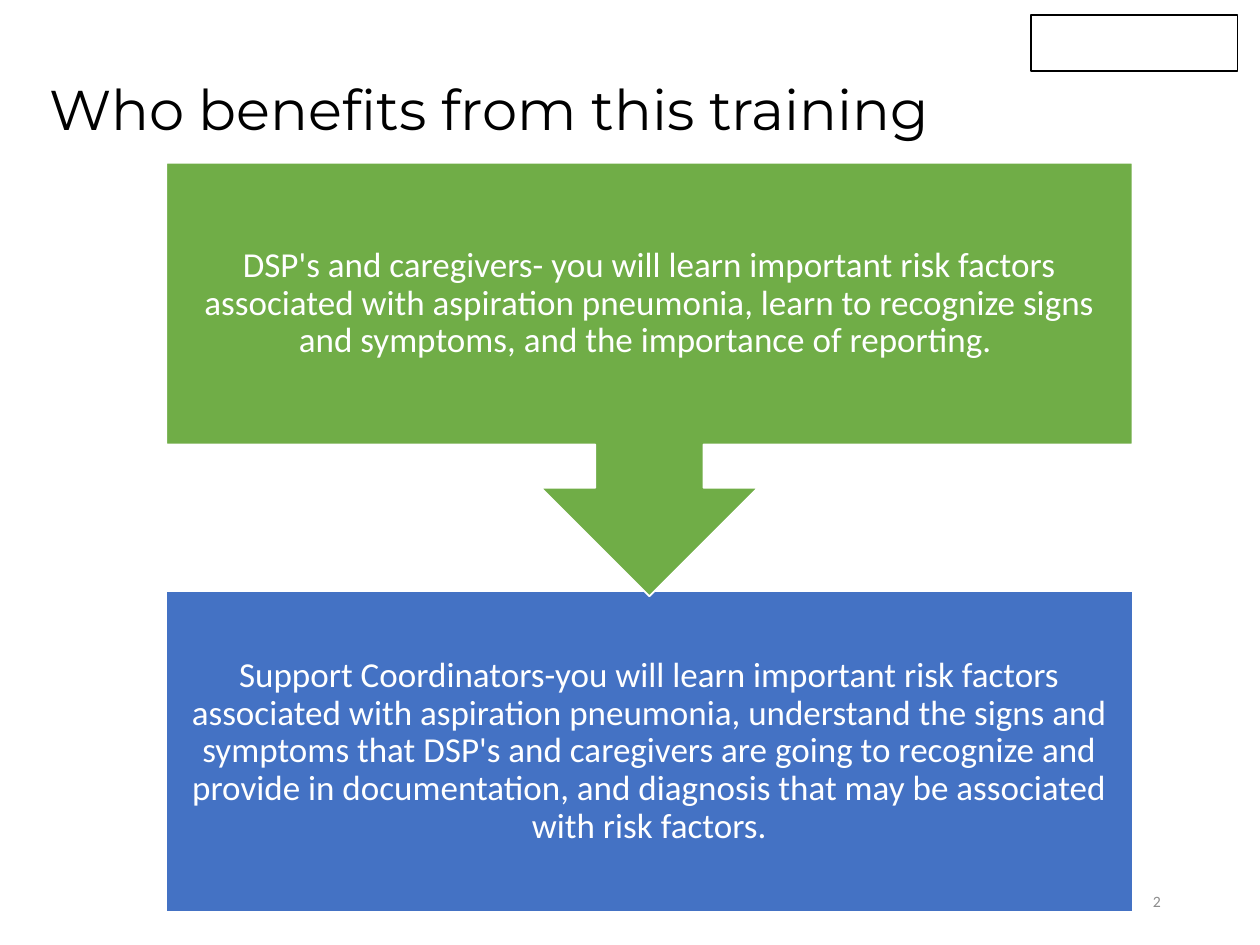
"""Build the slide on who benefits from the aspiration pneumonia training."""
from pptx import Presentation
from pptx.dml.color import RGBColor
from pptx.enum.shapes import MSO_SHAPE
from pptx.enum.text import MSO_ANCHOR, PP_ALIGN
from pptx.util import Cm, Pt

COLORS = {
    "black": "000000",
    "white": "FFFFFF",
    "gray": "8C8C8C",
    "green": "70AD47",
    "blue": "4472C4",
}
LEFT, WIDTH = 3.35, 19.48


def add_block(s, kind, box, fill, line):
    sp = s.shapes.add_shape(kind, *map(Cm, box))
    sp.shadow.inherit = False
    sp.fill.solid()
    sp.fill.fore_color.rgb = RGBColor.from_string(COLORS[fill])
    sp.line.color.rgb = RGBColor.from_string(COLORS[line])
    sp.line.width = Pt(1)
    return sp


def add_text(s, box, text, font, size, color, align, anchor=MSO_ANCHOR.MIDDLE):
    tf = s.shapes.add_textbox(*map(Cm, box)).text_frame
    tf.word_wrap = True
    tf.vertical_anchor = anchor
    p = tf.paragraphs[0]
    p.text = text
    p.alignment = align
    p.font.name = font
    p.font.size = Pt(size)
    p.font.color.rgb = RGBColor.from_string(COLORS[color])
    return tf


prs = Presentation()
prs.slide_width, prs.slide_height = Cm(25.4), Cm(19.05)
s = prs.slides.add_slide(prs.slide_layouts[6])

add_block(s, MSO_SHAPE.RECTANGLE, (20.78, 0.3, 4.17, 1.14), "white", "black")
add_text(s, (17.93, 17.65, 5.72, 1.02), "2", "Calibri", 9, "gray", PP_ALIGN.RIGHT)

audiences = [
    (MSO_SHAPE.RECTANGLE, "blue", 11.91, 6.48, 6.48, 0,
     "Support Coordinators-you will learn important risk factors associated with "
     "aspiration pneumonia, understand the signs and symptoms that DSP's and "
     "caregivers are going to recognize and provide in documentation, and "
     "diagnosis that may be associated with risk factors."),
    (MSO_SHAPE.UP_ARROW_CALLOUT, "green", 3.28, 8.74, 5.69, 180,
     "DSP's and caregivers- you will learn important risk factors associated with "
     "aspiration pneumonia, learn to recognize signs and symptoms, and the "
     "importance of reporting. "),
]
for kind, fill, top, height, text_height, rotation, text in audiences:
    sp = add_block(s, kind, (LEFT, top, WIDTH, height), fill, "white")
    sp.rotation = rotation
    tf = add_text(s, (LEFT, top, WIDTH, text_height), text,
                  "Calibri", 20, "white", PP_ALIGN.CENTER)
    tf.margin_left = tf.margin_right = tf.margin_top = tf.margin_bottom = Cm(0.4)
    tf.paragraphs[0].line_spacing = 0.9

add_text(s, (0.74, 1.37, 22.4, 1.63), "Who benefits from this training",
         "Montserrat", 32, "black", PP_ALIGN.LEFT, MSO_ANCHOR.TOP)

prs.save("out.pptx")
